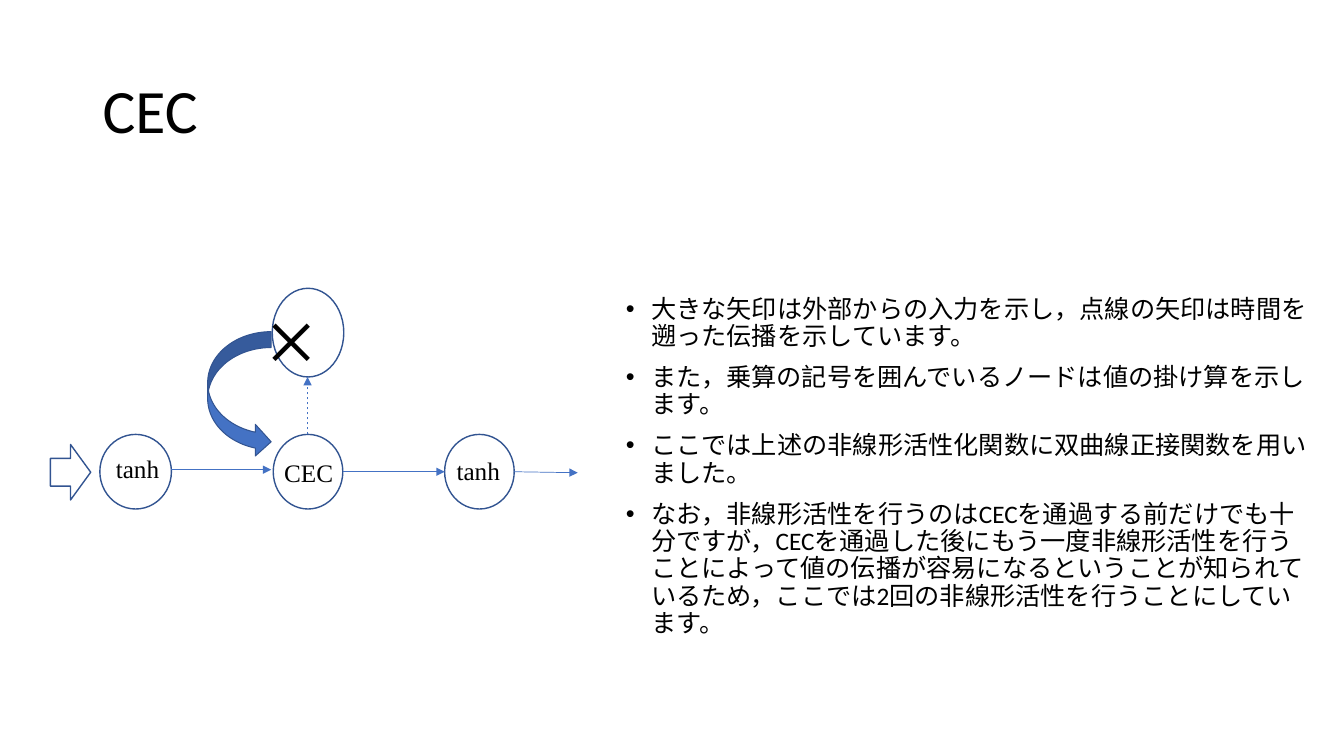
from lxml.etree import SubElement
from pptx import Presentation
from pptx.dml.color import RGBColor
from pptx.enum.dml import MSO_LINE
from pptx.enum.shapes import MSO_CONNECTOR, MSO_SHAPE
from pptx.enum.text import MSO_ANCHOR
from pptx.oxml.ns import qn
from pptx.util import Inches, Pt

COLORS = {"text": "000000", "arrow": "4472C4", "outline": "325491"}
SERIF = "Times New Roman"

prs = Presentation()
prs.slide_width, prs.slide_height = Inches(13.33), Inches(7.5)
s = prs.slides.add_slide(prs.slide_layouts[6])


def add_text(paragraphs, box, size=18, font="Calibri", anchor=MSO_ANCHOR.TOP,
             spacing=None, before=0, bullet=False, wrap=True):
    tf = s.shapes.add_textbox(*map(Inches, box)).text_frame
    tf.word_wrap = wrap
    tf.vertical_anchor = anchor
    for i, text in enumerate(paragraphs):
        p = tf.paragraphs[0] if i == 0 else tf.add_paragraph()
        p.line_spacing = spacing
        p.space_before = Pt(before)
        if bullet:
            pPr = p._p.get_or_add_pPr()
            pPr.set("marL", str(Inches(0.25)))
            pPr.set("indent", str(-Inches(0.25)))
            SubElement(pPr, qn("a:buFont"), typeface="Arial")
            SubElement(pPr, qn("a:buChar"), char="•")
        r = p.add_run()
        r.text = text
        r.font.size = Pt(size)
        r.font.name = font
        r.font.color.rgb = RGBColor.from_string(COLORS["text"])


def add_outline(kind, box, fill=None, width=1):
    sp = s.shapes.add_shape(kind, *map(Inches, box))
    sp.shadow.inherit = False
    if fill:
        sp.fill.solid()
        sp.fill.fore_color.rgb = RGBColor.from_string(fill)
    else:
        sp.fill.background()
    sp.line.color.rgb = RGBColor.from_string(COLORS["outline"])
    sp.line.width = Pt(width)


# Title and explanation
add_text(["CEC"], (0.92, 0.4, 11.5, 1.45), size=44,
         anchor=MSO_ANCHOR.MIDDLE, spacing=0.9)
add_text([
    "大きな矢印は外部からの入力を示し，点線の矢印は時間を遡った伝播を示しています。",
    "また，乗算の記号を囲んでいるノードは値の掛け算を示します。",
    "ここでは上述の非線形活性化関数に双曲線正接関数を用いました。",
    "なお，非線形活性を行うのはCECを通過する前だけでも十分ですが，CECを通過した後に"
    "もう一度非線形活性を行うことによって値の伝播が容易になるということが知られているため，"
    "ここでは2回の非線形活性を行うことにしています。",
], (6.11, 2.89, 6.98, 5.1), spacing=0.9, before=10, bullet=True)

# Nodes: input tanh, CEC, output tanh, multiplication
for node in [(0.99, 4.31, 0.71, 0.74), (2.71, 4.31, 0.69, 0.74),
             (4.41, 4.31, 0.69, 0.74), (2.7, 2.86, 0.71, 0.88)]:
    add_outline(MSO_SHAPE.OVAL, node)

# Thin arrows; the dashed one goes back in time
for x1, y1, x2, y2, dashed in [(1.7, 4.66, 2.69, 4.66, False),
                               (3.4, 4.68, 4.41, 4.68, False),
                               (5.1, 4.68, 5.73, 4.69, False),
                               (3.05, 4.31, 3.05, 3.74, True)]:
    c = s.shapes.add_connector(MSO_CONNECTOR.STRAIGHT,
                               *map(Inches, (x1, y1, x2, y2)))
    c.line.color.rgb = RGBColor.from_string(COLORS["arrow"])
    c.line.width = Pt(0.5)
    if dashed:
        c.line.dash_style = MSO_LINE.DASH
    SubElement(c.line._get_or_add_ln(), qn("a:tailEnd"), type="triangle")
    SubElement(c._element.spPr, qn("a:effectLst"))

# Feedback arrow and external input arrow
add_outline(MSO_SHAPE.CURVED_RIGHT_ARROW, (2.06, 3.29, 0.63, 1.25),
            fill=COLORS["arrow"], width=0)
add_outline(MSO_SHAPE.RIGHT_ARROW, (0.5, 4.41, 0.4, 0.55))

# Node labels
add_text(["tanh"], (1.05, 4.48, 1.05, 0.53), font=SERIF, spacing=0.9, before=10)
add_text(["tanh"], (4.43, 4.47, 0.85, 0.4), font=SERIF)
add_text(["CEC"], (2.72, 4.49, 0.69, 0.4), font=SERIF, wrap=False)
add_text(["×"], (2.53, 2.74, 0.81, 1.21), size=66, font=SERIF)

prs.save("out.pptx")
